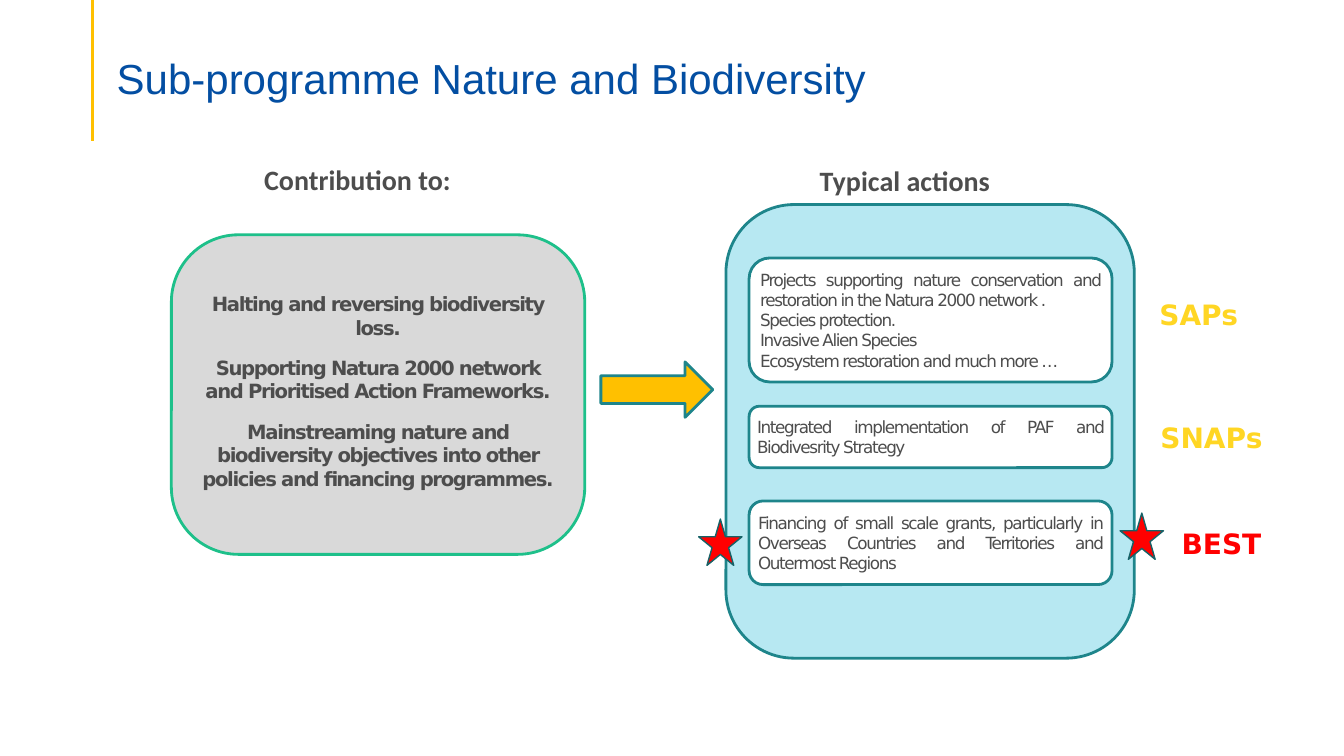
from pptx import Presentation
from pptx import util as u
from pptx.dml.color import RGBColor
from pptx.enum import shapes, text
from pptx.oxml.ns import qn
from lxml import etree

COLOURS = {
    "gold": "FFC000", "yellow": "FFD624", "red": "FF0000", "blue": "034EA2",
    "grey": "4D4D4D", "silver": "D9D9D9", "white": "FFFFFF", "sky": "B7E8F2",
    "teal": "1E858B", "deep teal": "166267", "green": "1EC08A",
}
KINDS = shapes.MSO_SHAPE
ALIGN = text.PP_ALIGN
ANCHOR = text.MSO_ANCHOR
BODY = "DejaVu Sans"


def colour(name):
    return RGBColor.from_string(COLOURS[name])


class PageBuilder:
    """Holds the default text style and the page being drawn."""

    def __init__(self, page):
        self.page = page
        self.style = {"name": BODY, "size": u.Pt(12), "bold": False}

    def fill_text(self, box, lines, tint="grey", align=ALIGN.LEFT, anchor=ANCHOR.TOP,
                  insets=(0.05, 0.05, 0.05, 0.05), gap=0, spacing=None, tracking=0, **style):
        frame = box.text_frame
        left, top, right, bottom = map(u.Inches, insets)
        layout = {"word_wrap": True, "vertical_anchor": anchor, "margin_left": left,
                  "margin_top": top, "margin_right": right, "margin_bottom": bottom}
        for key, value in layout.items():
            setattr(frame, key, value)
        for index, line in enumerate(lines):
            para = frame.add_paragraph() if index else frame.paragraphs[0]
            para.alignment = align
            if spacing:
                para.line_spacing = spacing
            if index and gap:
                para.space_before = u.Pt(gap)
            span = para.add_run()
            span.text = line
            for key, value in {**self.style, **style}.items():
                setattr(span.font, key, value)
            span.font.color.rgb = colour(tint)
            if tracking:
                span.font._element.set("spc", str(tracking * 100))

    def shape(self, kind, place, fill, line, width=2):
        box = self.page.shapes.add_shape(kind, *map(u.Inches, place))
        box.shadow.inherit = False
        box.fill.solid()
        box.fill.fore_color.rgb = colour(fill)
        box.line.color.rgb = colour(line)
        box.line.width = u.Pt(width)
        return box

    def label(self, place, words, **style):
        box = self.page.shapes.add_textbox(*map(u.Inches, place))
        self.fill_text(box, [words], **style)

    def rule(self, start, end, tint, width):
        line = self.page.shapes.add_connector(
            shapes.MSO_CONNECTOR.STRAIGHT, *map(u.Inches, start + end))
        line.line.color.rgb = colour(tint)
        line.line.width = u.Pt(width)
        etree.SubElement(line._element.spPr, qn("a:effectLst"))


def main():
    deck = Presentation()
    deck.slide_width, deck.slide_height = u.Inches(13.33), u.Inches(7.5)
    builder = PageBuilder(deck.slides.add_slide(deck.slide_layouts[6]))

    # Title and its rule
    builder.rule((0.92, 0), (0.92, 1.4), "gold", 2.25)
    builder.label((1.06, 0.53, 11.5, 1.25), "Sub-programme Nature and Biodiversity",
                  tint="blue", name="Arial", size=u.Pt(30), spacing=0.9,
                  insets=(0.1, 0.05, 0.1, 0))

    # Column headings
    for place, words in [((2.57, 1.56, 2.68, 0.44), "Contribution to:"),
                         ((8.08, 1.57, 3.59, 0.44), "Typical actions")]:
        builder.label(place, words, name="Calibri", size=u.Pt(20), bold=True)

    # Goals panel
    goals = builder.shape(KINDS.ROUNDED_RECTANGLE, (1.7, 2.33, 4.1, 3.17), "silver", "green")
    goals.adjustments[0] = 0.21
    builder.fill_text(goals, [
        "Halting and reversing biodiversity loss.",
        "Supporting Natura 2000 network and Prioritised Action Frameworks.",
        "Mainstreaming nature and biodiversity objectives into other policies "
        "and financing programmes.",
    ], align=ALIGN.CENTER, anchor=ANCHOR.MIDDLE, insets=(0.05, 0, 0.05, 0.07),
        gap=12, tracking=-1, size=u.Pt(14), bold=True)

    # Arrow and actions panel
    builder.shape(KINDS.RIGHT_ARROW, (5.96, 3.59, 1.11, 0.55), "gold", "teal")
    builder.shape(KINDS.ROUNDED_RECTANGLE, (7.2, 2.03, 4.05, 4.5), "sky", "teal")

    # Actions, each with its project type
    actions = [
        (2.56, 1.23, ["Projects supporting nature conservation and restoration "
                      "in the Natura 2000 network .",
                      "Species protection.", "Invasive Alien Species",
                      "Ecosystem restoration and much more …"],
         "SAPs", "yellow", 11.4, 2.9),
        (4.03, 0.61, ["Integrated implementation of PAF and Biodivesrity Strategy"],
         "SNAPs", "yellow", 11.41, 4.12),
        (4.97, 0.83, ["Financing of small scale grants, particularly in Overseas "
                      "Countries and Territories and Outermost Regions"],
         "BEST", "red", 11.62, 5.17),
    ]
    for top, height, lines, tag, tint, tag_left, tag_top in actions:
        action = builder.shape(KINDS.ROUNDED_RECTANGLE, (7.43, top, 3.6, height),
                               "white", "teal")
        builder.fill_text(action, lines, align=ALIGN.JUSTIFY, anchor=ANCHOR.MIDDLE,
                          tracking=-1)
        builder.label((tag_left, tag_top, 1.28, 0.44), tag, tint=tint,
                      insets=(0.1, 0.05, 0.1, 0.05), size=u.Pt(20), bold=True)

    # Stars beside the last action
    for left, top in [(6.93, 5.15), (11.11, 5.09)]:
        builder.shape(KINDS.STAR_5_POINT, (left, top, 0.43, 0.46), "red", "deep teal", 1)

    deck.save("out.pptx")


if __name__ == "__main__":
    main()
